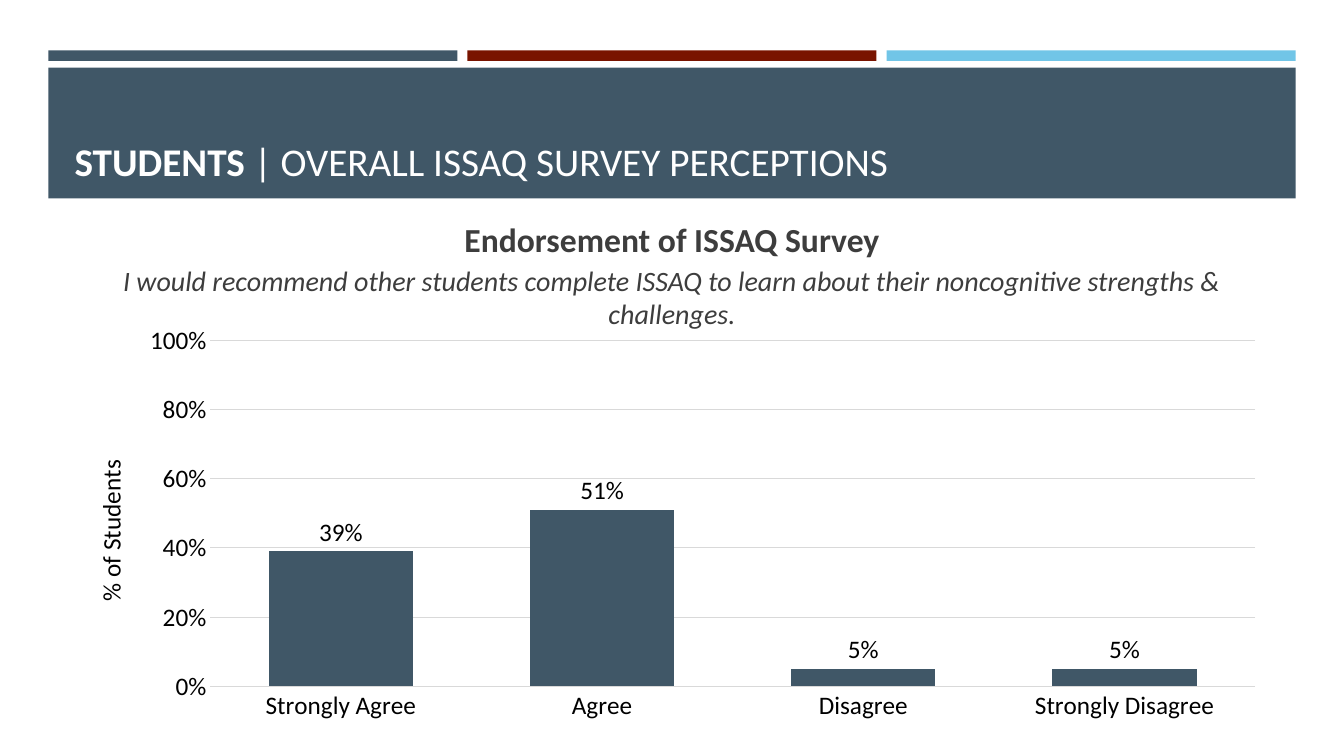
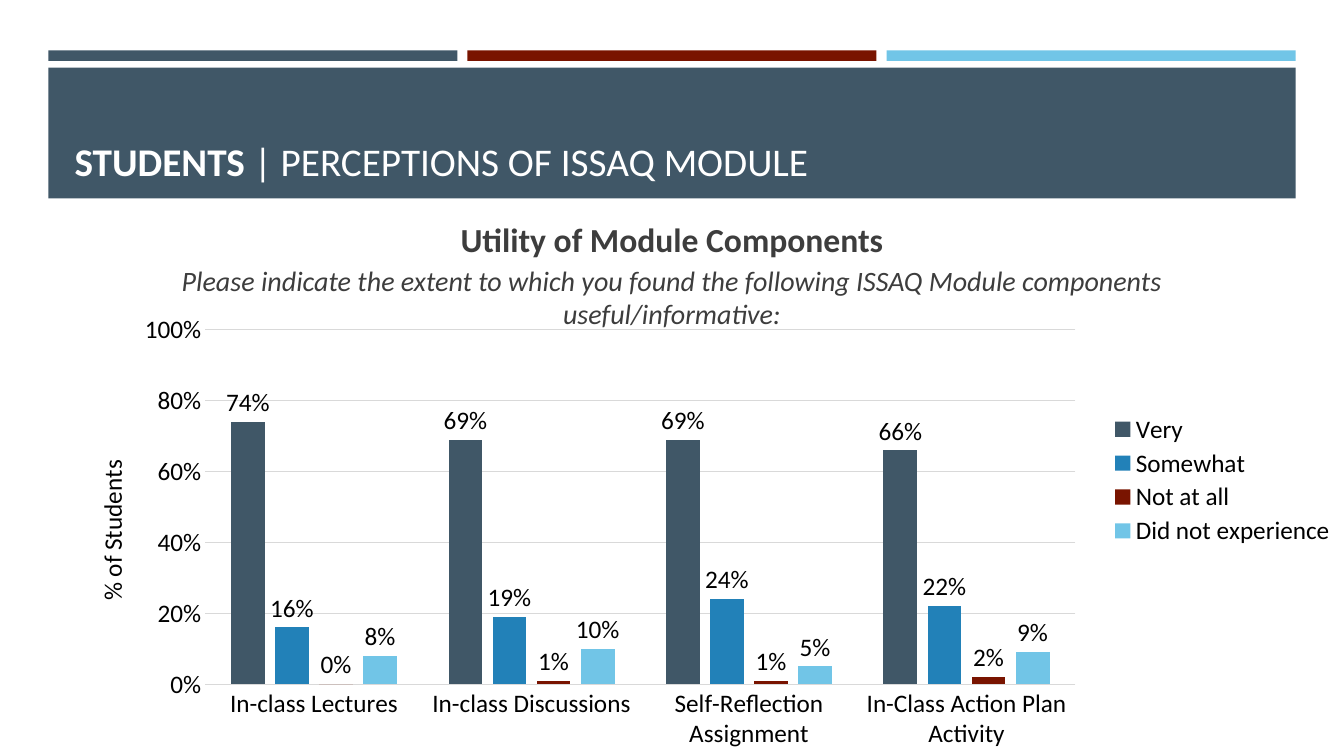
from dataclasses import dataclass
from typing import Any, NamedTuple

from lxml.etree import SubElement
from pptx import Presentation
from pptx.chart.chart import Chart
from pptx.chart.data import CategoryChartData
from pptx.dml.color import RGBColor
from pptx.enum.chart import XL_CHART_TYPE, XL_LABEL_POSITION, XL_LEGEND_POSITION, XL_TICK_MARK
from pptx.enum.shapes import MSO_SHAPE
from pptx.enum.text import MSO_ANCHOR, MSO_AUTO_SIZE, PP_ALIGN
from pptx.oxml.ns import qn
from pptx.slide import Slide, SlideLayout
from pptx.util import Inches, Pt


class Box(NamedTuple):
    x: float
    y: float
    w: float
    h: float


@dataclass(frozen=True)
class Theme:
    font: str = "Calibri"
    slate: str = "405767"
    blue: str = "2281B8"
    red: str = "791400"
    sky: str = "71C5E7"
    white: str = "FFFFFF"
    text: str = "3D3D3D"
    black: str = "000000"
    grid: str = "D9D9D9"
    title: int = 28
    head: int = 24
    lead: int = 20
    label: int = 18


@dataclass(frozen=True)
class Series:
    name: str
    color: str
    vals: tuple[float, ...]


@dataclass(frozen=True)
class Graph:
    box: Box
    plot: Box
    gap: int
    lap: int
    cats: tuple[str, ...]
    rows: tuple[Series, ...]
    key: Box | None = None


@dataclass(frozen=True)
class Page:
    title: str
    head: str
    lead: str
    graph: Graph


LOOK = Theme()
WIDE, HIGH = Inches(13.33), Inches(7.5)
GRID = 100
BAND = Box(3.6, 8.93, 92.8, 17.33)
TITLE = Box(4.8, 10.27, 90.4, 14.8)
BODY = Box(4.8, 28.27, 90.4, 63.87)
TOP, THIN, SPACE = 6.67, 1.4, 0.75
NAME = Box(0.02, 0.33, 0, 0)

PAGES = (
    Page(
        "| OVERALL ISSAQ SURVEY PERCEPTIONS",
        "Endorsement of ISSAQ Survey",
        "I would recommend other students complete ISSAQ to learn about their "
        "noncognitive strengths & challenges.",
        Graph(
            Box(4.8, 42.27, 90.4, 54.53), Box(0.12, 0.05, 0.86, 0.84), 81, -27,
            ("Strongly Agree", "Agree", "Disagree", "Strongly Disagree"),
            (Series("Series 1", LOOK.slate, (0.39, 0.51, 0.05, 0.05)),),
        ),
    ),
    Page(
        "| PERCEPTIONS OF ISSAQ MODULE",
        "Utility of Module Components",
        "Please indicate the extent to which you found the following ISSAQ Module "
        "components useful/informative:",
        Graph(
            Box(4.8, 40.67, 95.2, 59.33), Box(0.11, 0.05, 0.68, 0.79), 152, -30,
            ("In-class Lectures", "In-class Discussions",
             "Self-Reflection Assignment", "In-Class Action Plan Activity"),
            (
                Series("Very", LOOK.slate, (0.74, 0.69, 0.69, 0.66)),
                Series("Somewhat", LOOK.blue, (0.16, 0.19, 0.24, 0.22)),
                Series("Not at all", LOOK.red, (0, 0.01, 0.01, 0.02)),
                Series("Did not experience", LOOK.sky, (0.08, 0.1, 0.05, 0.09)),
            ),
            Box(0.81, 0.23, 0.19, 0.31),
        ),
    ),
)


def rgb(color: str) -> RGBColor:
    return RGBColor.from_string(color)


def put(item: Any, **form: Any) -> None:
    for name, value in form.items():
        setattr(item, name, value)


def span(box: Box) -> tuple[int, ...]:
    col, row = WIDE / GRID, HIGH / GRID
    return tuple(round(n) for n in (box.x * col, box.y * row, box.w * col, box.h * row))


def ink(font: Any, size: int, color: str, **form: Any) -> None:
    put(font, name=LOOK.font, size=Pt(size), **form)
    font.color.rgb = rgb(color)


def block(slide: Slide, box: Box, color: str) -> Any:
    shape = slide.shapes.add_shape(MSO_SHAPE.RECTANGLE, *span(box))
    shape.shadow.inherit = False
    shape.fill.solid()
    shape.fill.fore_color.rgb = rgb(color)
    shape.line.fill.background()
    return shape


def frame(slide: Slide, layout: SlideLayout) -> None:
    for holder in list(layout.placeholders):
        if holder.placeholder_format.idx >= 10:
            layout.shapes.element.remove(holder.element)
    width = (BAND.w - 2 * SPACE) / 3
    parts = [block(slide, BAND, LOOK.slate)]
    for i, color in enumerate((LOOK.slate, LOOK.red, LOOK.sky)):
        parts.append(block(slide, Box(BAND.x + i * (width + SPACE), TOP, width, THIN), color))
    for part in parts:
        layout.shapes.element.append(part.element)


def write(slide: Slide, page: Page) -> None:
    title = slide.shapes.title
    left, top, width, height = span(TITLE)
    put(title, left=left, top=top, width=width, height=height)
    put(title.text_frame, word_wrap=True, auto_size=MSO_AUTO_SIZE.NONE,
        vertical_anchor=MSO_ANCHOR.BOTTOM)
    line = title.text_frame.paragraphs[0]
    line.alignment = PP_ALIGN.LEFT
    for text, bold in (("STUDENTS ", True), (page.title, False)):
        run = line.add_run()
        run.text = text
        ink(run.font, LOOK.title, LOOK.white, bold=bold)

    body = slide.shapes.add_textbox(*span(BODY)).text_frame
    body.word_wrap = True
    for i, (text, size) in enumerate(((page.head, LOOK.head), (page.lead, LOOK.lead))):
        line = body.add_paragraph() if i else body.paragraphs[0]
        put(line, alignment=PP_ALIGN.CENTER, space_after=Pt(3))
        run = line.add_run()
        run.text = text
        ink(run.font, size, LOOK.text, bold=not i, italic=bool(i))


def pin(chart: Chart, query: str, box: Box, slot: int = 1) -> None:
    node = chart.element.xpath(query)[0]
    for old in node.findall(qn("c:layout")):
        node.remove(old)
    layout = SubElement(node, qn("c:layout"))
    node.insert(slot, layout)
    form = SubElement(layout, qn("c:manualLayout"))
    marks = {"xMode": "edge", "yMode": "edge", **{k: v for k, v in box._asdict().items() if v}}
    if not slot:
        marks = {"layoutTarget": "inner", **marks}
    for name, value in marks.items():
        SubElement(form, qn(f"c:{name}")).set("val", str(value))


def rule(line: Any) -> None:
    line.width = Pt(0.75)
    line.color.rgb = rgb(LOOK.grid)


def axes(chart: Chart) -> None:
    for axis in (chart.category_axis, chart.value_axis):
        put(axis, major_tick_mark=XL_TICK_MARK.NONE, minor_tick_mark=XL_TICK_MARK.NONE)
        ink(axis.tick_labels.font, LOOK.label, LOOK.black)
    rule(chart.category_axis.format.line)
    axis = chart.value_axis
    put(axis, minimum_scale=0, maximum_scale=1, major_unit=0.2, has_major_gridlines=True)
    put(axis.tick_labels, number_format="0%", number_format_is_linked=False)
    axis.format.line.fill.background()
    rule(axis.major_gridlines.format.line)
    line = axis.axis_title.text_frame.paragraphs[0]
    run = line.add_run()
    run.text = "% of Students"
    ink(run.font, LOOK.label, LOOK.black, bold=False)
    pin(chart, ".//c:valAx/c:title", NAME)


def draw(slide: Slide, graph: Graph) -> None:
    data = CategoryChartData(number_format="0%")
    data.categories = graph.cats
    for row in graph.rows:
        data.add_series(row.name, row.vals)
    chart = slide.shapes.add_chart(XL_CHART_TYPE.COLUMN_CLUSTERED, *span(graph.box), data).chart
    put(chart, has_title=False, has_legend=graph.key is not None)
    ink(chart.font, LOOK.label, LOOK.black)
    axes(chart)
    plot = chart.plots[0]
    put(plot, gap_width=graph.gap, overlap=graph.lap, vary_by_categories=False)
    for row, series in zip(graph.rows, plot.series):
        series.format.fill.solid()
        series.format.fill.fore_color.rgb = rgb(row.color)
        put(series.data_labels, show_value=True, position=XL_LABEL_POSITION.OUTSIDE_END,
            number_format="0%", number_format_is_linked=False)
        ink(series.data_labels.font, LOOK.label, LOOK.black)
    pin(chart, ".//c:plotArea", graph.plot, 0)
    if graph.key:
        put(chart.legend, position=XL_LEGEND_POSITION.RIGHT, include_in_layout=False)
        ink(chart.legend.font, LOOK.label, LOOK.black)
        pin(chart, ".//c:legend", graph.key)


def main() -> None:
    deck = Presentation()
    put(deck, slide_width=WIDE, slide_height=HIGH)
    layout = deck.slide_layouts[5]
    for i, page in enumerate(PAGES):
        slide = deck.slides.add_slide(layout)
        if not i:
            frame(slide, layout)
        write(slide, page)
        draw(slide, page.graph)
    deck.save("out.pptx")


if __name__ == "__main__":
    main()
